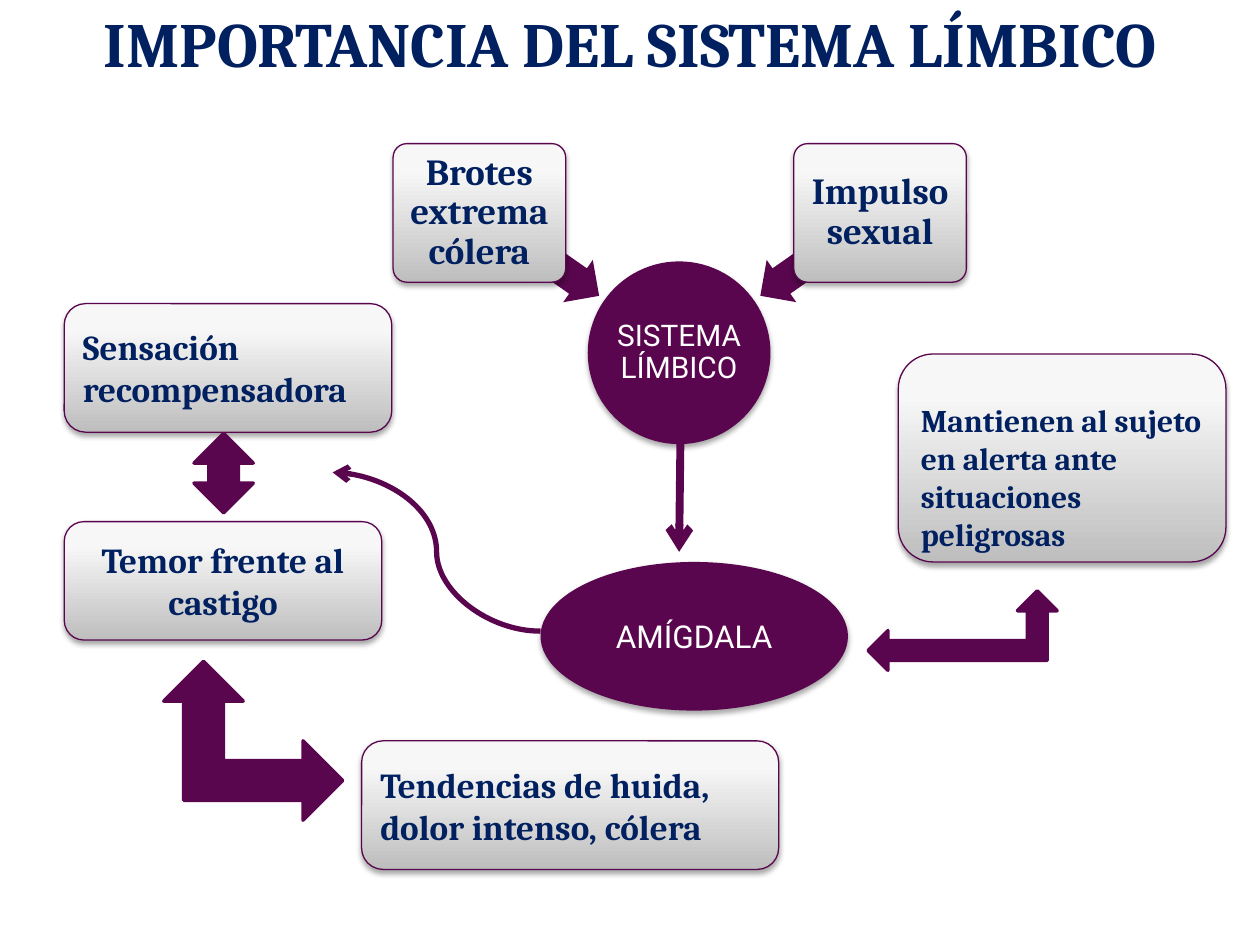
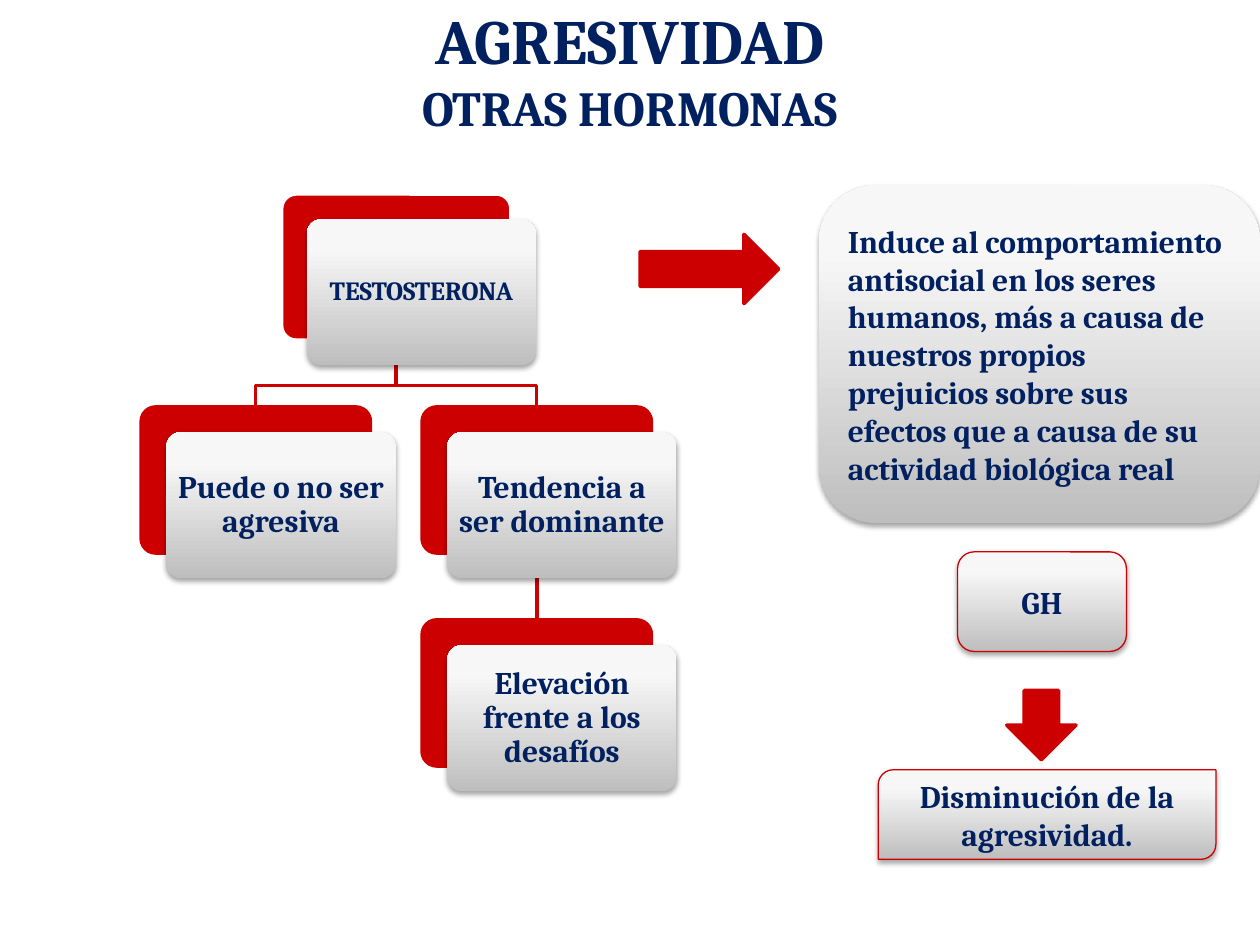
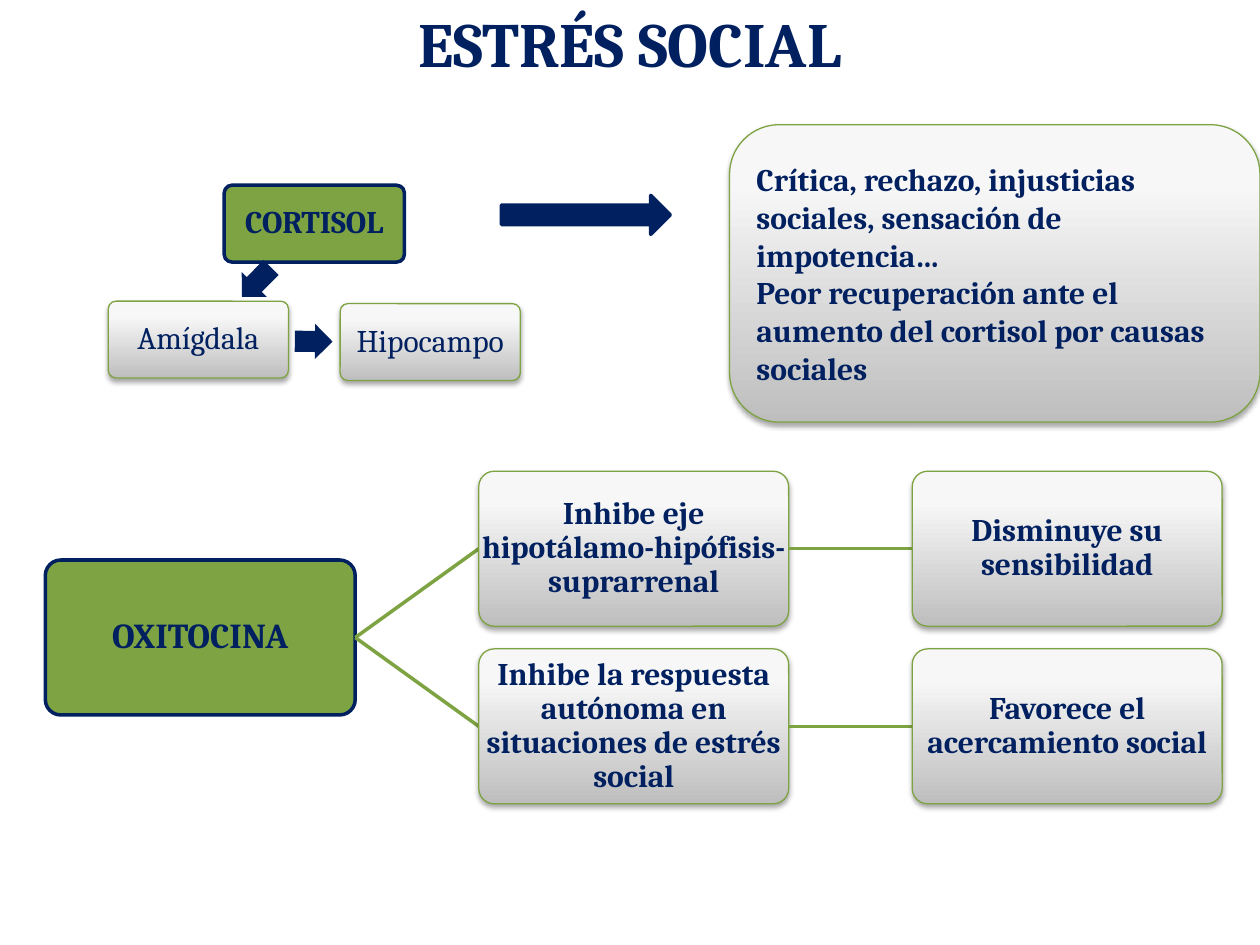
from pptx import Presentation
from pptx import util as u
from pptx.dml.color import RGBColor
from pptx.enum import shapes, text
from pptx.oxml import parse_xml
from pptx.oxml.ns import nsdecls, qn

NAVY, PLUM, RED, GREEN, WHITE = "002060", "5A064E", "CC0000", "7EA343", "FFFFFF"
SILVER = [(0, "BEBEBE"), (80, "F7F7F7"), (100, "F8F8F8")]
SERIF, SANS = "Cambria", "Roboto"
WIDTH, HEIGHT = 10, 7.5
PRESET, LINK = shapes.MSO_SHAPE, shapes.MSO_CONNECTOR
LEFT, CENTER = text.PP_ALIGN.LEFT, text.PP_ALIGN.CENTER
ROUND = PRESET.ROUNDED_RECTANGLE

IMPULSES = [
    ("Brotes extrema cólera", (3.12, 1.14, 1.37, 1.1), (3.7, 1.81, 1.16, 0.41), 215),
    ("Impulso sexual", (6.3, 1.14, 1.37, 1.1), (5.93, 1.81, 1.16, 0.41), 325),
]
REACTIONS = [
    ("Tendencias de huida, dolor intenso, cólera", (2.87, 5.88, 3.31, 1.02), LEFT, 20, 0.05),
    ("Sensación recompensadora", (0.51, 2.41, 2.6, 1.02), LEFT, 20, 0.05),
    ("Mantienen al sujeto en alerta ante situaciones peligrosas",
     (7.13, 2.81, 2.6, 1.65), LEFT, 18, 0.35),
    ("Temor frente al castigo", (0.51, 4.14, 2.52, 0.94), CENTER, 20, 0.05),
]
REACTION_ARROWS = [
    (PRESET.UP_DOWN_ARROW, (1.54, 3.44, 0.47, 0.63), 0),
    (PRESET.LEFT_UP_ARROW, (1.38, 5.17, 1.26, 1.42), 90),
    (PRESET.LEFT_UP_ARROW, (6.89, 4.69, 1.5, 0.63), 0),
]

TESTOSTERONE_TREE = [
    ("TESTOSTERONA", 0.5, 0, 15, WHITE),
    ("Puede o no ser agresiva", 0, 1, 18, RED),
    ("Tendencia a ser dominante", 1, 1, 18, RED),
    ("Elevación frente a los desafíos", 1, 2, 18, RED),
]
ANTISOCIAL = ("Induce al comportamiento antisocial en los seres humanos, más a causa de "
              "nuestros propios prejuicios sobre sus efectos que a causa de su actividad "
              "biológica real")

CORTISOL_TARGETS = [
    ("Amígdala", (0.86, 2.39, 1.43, 0.61)),
    ("Hipocampo", (2.7, 2.41, 1.43, 0.61)),
]
CORTISOL_ARROWS = [((1.87, 2.1, 0.33, 0.28), 134.8), ((2.34, 2.57, 0.3, 0.28), 0.6)]
SOCIAL_CAUSES = ("Crítica, rechazo, injusticias sociales, sensación de impotencia…\n"
                 "Peor recuperación ante el aumento del cortisol por causas sociales")
OXYTOCIN_ROWS = [
    ("Inhibe eje hipotálamo-hipófisis-suprarrenal", "Disminuye su sensibilidad"),
    ("Inhibe la respuesta autónoma en situaciones de estrés social",
     "Favorece el acercamiento social"),
]


def color(value):
    return RGBColor.from_string(value)


def inches(values):
    return [u.Inches(value) for value in values]


def write(shape, content, size, align=CENTER, tone=NAVY, font=SERIF, bold=True,
          margin=None, top=0.05, spacing=None):
    frame = shape.text_frame
    frame.word_wrap = True
    frame.vertical_anchor = text.MSO_ANCHOR.MIDDLE
    if margin is not None:
        frame.margin_left = frame.margin_right = u.Inches(margin)
        frame.margin_bottom = u.Inches(margin)
        top = margin
    frame.margin_top = u.Inches(top)
    paragraph = frame.paragraphs[0]
    paragraph.alignment = align
    paragraph.line_spacing = spacing
    sizes = size if isinstance(size, tuple) else (size,)
    for index, part in enumerate(content.split("\n")):
        if index:
            paragraph.add_line_break()
        run = paragraph.add_run()
        run.text = part
        run.font.name = font
        run.font.size = u.Pt(sizes[min(index, len(sizes) - 1)])
        run.font.bold = bold
        run.font.color.rgb = color(tone)


def paint_line(line, tone, width):
    if tone is None:
        line.fill.background()
    else:
        line.color.rgb = color(tone)
        line.width = u.Pt(width)


def add_shadow(shape):
    shape._element.spPr.find(qn("a:effectLst")).append(parse_xml(
        f'<a:outerShdw {nsdecls("a")} blurRad="{u.Pt(3.1)}" dist="{u.Pt(1.8)}" '
        'dir="5400000" rotWithShape="0"><a:srgbClr val="000000">'
        '<a:alpha val="35000"/></a:srgbClr></a:outerShdw>'))


def add_shape(slide, preset, box, fill, line=None, width=2, rotation=0, adjust=(),
              shadow=False):
    shape = slide.shapes.add_shape(preset, *inches(box))
    shape.rotation = rotation
    for index, value in enumerate(adjust):
        shape.adjustments[index] = value
    if fill == SILVER:
        shape.fill.gradient()
        shape.fill.gradient_angle = 90
        stops = shape._element.spPr.find(qn("a:gradFill")).find(qn("a:gsLst"))
        for stop in list(stops):
            stops.remove(stop)
        for position, tone in SILVER:
            stops.append(parse_xml(
                f'<a:gs {nsdecls("a")} pos="{position * 1000}">'
                f'<a:srgbClr val="{tone}"/></a:gs>'))
    else:
        shape.fill.solid()
        shape.fill.fore_color.rgb = color(fill)
    paint_line(shape.line, line, width)
    shape.shadow.inherit = False
    if shadow:
        add_shadow(shape)
    return shape


def add_panel(slide, content, box, line, size=18, align=CENTER, top=0.05, preset=ROUND):
    panel = add_shape(slide, preset, box, SILVER, line, 0.75, shadow=True)
    write(panel, content, size, align, top=top)


def add_label(slide, content, box, size, margin, **style):
    label = slide.shapes.add_textbox(*inches(box))
    write(label, content, size, margin=margin, spacing=0.9, **style)


def add_card(slide, content, box, line, size=18, margin=0.07, bold=True):
    add_shape(slide, ROUND, box, SILVER, line, 0.75, adjust=[0.1], shadow=True)
    add_label(slide, content, box, size, margin, bold=bold)


def add_source_card(slide, content, box, size, margin):
    add_shape(slide, ROUND, box, GREEN, NAVY, adjust=[0.1])
    add_label(slide, content, box, size, margin)


def add_link(slide, start, end, tone, width=2, kind=LINK.STRAIGHT, arrow=False):
    connector = slide.shapes.add_connector(kind, *inches(start + end))
    paint_line(connector.line, tone, width)
    if arrow:
        connector.line._get_or_add_ln().append(
            parse_xml(f'<a:tailEnd {nsdecls("a")} type="arrow"/>'))
    connector._element.spPr.append(parse_xml(f'<a:effectLst {nsdecls("a")}/>'))


def add_branch(slide, points, tone):
    start, *rest = [inches(point) for point in points]
    builder = slide.shapes.build_freeform(*start)
    builder.add_line_segments(rest, close=False)
    branch = builder.convert_to_shape()
    branch.fill.background()
    paint_line(branch.line, tone, 2)
    branch.shadow.inherit = False


def new_slide(presentation, title, top=0, size=36):
    slide = presentation.slides.add_slide(presentation.slide_layouts[6])
    box = slide.shapes.add_textbox(*inches((0, top, WIDTH, 0.67)))
    write(box, title, size)
    return slide


def build_limbic(presentation):
    slide = new_slide(presentation, "IMPORTANCIA DEL SISTEMA LÍMBICO")
    hub = (4.67, 2.08, 1.44, 1.44)
    add_shape(slide, PRESET.OVAL, hub, PLUM, PLUM, 0.75, shadow=True)
    add_label(slide, "SISTEMA LÍMBICO", hub, 17, 0.01, tone=WHITE, font=SANS, bold=False)
    for content, box, arrow, rotation in IMPULSES:
        add_shape(slide, PRESET.LEFT_ARROW, arrow, PLUM, rotation=rotation, adjust=[0.6, 0.5])
        add_card(slide, content, box, PLUM, 21, 0.04)
    for content, box, align, size, top in REACTIONS:
        add_panel(slide, content, box, PLUM, size, align, top)
    amygdala = add_shape(slide, PRESET.OVAL, (4.29, 4.46, 2.44, 1.18), PLUM, shadow=True)
    write(amygdala, "AMÍGDALA", 18, tone=WHITE, font=SANS, bold=False)
    add_link(slide, (5.4, 3.51), (5.39, 4.38), PLUM, 4.5, arrow=True)
    add_link(slide, (4.29, 5.01), (2.64, 3.75), PLUM, 3, LINK.CURVE, arrow=True)
    for preset, box, rotation in REACTION_ARROWS:
        add_shape(slide, preset, box, PLUM, PLUM, rotation=rotation)


def build_hormones(presentation):
    slide = new_slide(presentation, "AGRESIVIDAD\nOTRAS HORMONAS", 0.21, (36, 28))
    left, top, column_step, row_step = 1.12, 1.54, 2.23, 1.69
    width, height, offset = 1.82, 1.16, 0.2

    def middle(column):
        return left + column * column_step + width / 2

    def row_top(row):
        return top + row * row_step

    trunk, fork = middle(0.5), row_top(1) - 0.17
    add_link(slide, (middle(1), row_top(1) + height), (middle(1), row_top(2)), RED)
    for column in (1, 0):
        add_branch(slide, [(trunk, row_top(0) + height), (trunk, fork),
                           (middle(column), fork), (middle(column), row_top(1))], RED)
    for content, column, row, size, line in TESTOSTERONE_TREE:
        x, y = left + column * column_step, row_top(row)
        add_shape(slide, ROUND, (x, y, width, height), RED, line, adjust=[0.1])
        add_card(slide, content, (x + offset, y + offset, width, height), None, size)
    add_shape(slide, PRESET.RIGHT_ARROW, (5.08, 1.86, 1.1, 0.55), RED, RED)
    add_panel(slide, ANTISOCIAL, (6.5, 1.47, 3.5, 2.68), None, align=LEFT)
    add_panel(slide, "GH", (7.6, 4.38, 1.34, 0.79), RED)
    add_panel(slide, "Disminución de la agresividad.", (6.97, 6.11, 2.68, 0.71), RED,
              preset=PRESET.ROUND_2_DIAG_RECTANGLE)
    add_shape(slide, PRESET.DOWN_ARROW, (7.99, 5.48, 0.55, 0.55), RED, RED)


def build_stress(presentation):
    slide = new_slide(presentation, "ESTRÉS SOCIAL")
    add_source_card(slide, "CORTISOL", (1.78, 1.47, 1.43, 0.61), 18, 0.07)
    for (content, box), (arrow, rotation) in zip(CORTISOL_TARGETS, CORTISOL_ARROWS):
        add_shape(slide, PRESET.RIGHT_ARROW, arrow, NAVY, rotation=rotation, adjust=[0.6, 0.5])
        add_card(slide, content, box, GREEN, bold=False)
    add_shape(slide, PRESET.RIGHT_ARROW, (3.98, 1.55, 1.34, 0.31), NAVY, NAVY)
    add_panel(slide, SOCIAL_CAUSES, (5.79, 0.99, 4.21, 2.36), GREEN, align=LEFT)

    width, height = 2.46, 1.23

    def cell(column, row):
        return 0.36 + 3.44 * column, 3.74 + 1.41 * row, width, height

    def side(column, row, share):
        x, y, _, _ = cell(column, row)
        return x + share * width, y + height / 2

    add_source_card(slide, "OXITOCINA", cell(0, 0.5), 20, 0.01)
    for row, (effect, outcome) in enumerate(OXYTOCIN_ROWS):
        add_link(slide, side(0, 0.5, 1), side(1, row, 0), GREEN)
        add_card(slide, effect, cell(1, row), GREEN, margin=0.01)
        add_link(slide, side(1, row, 1), side(2, row, 0), GREEN)
        add_card(slide, outcome, cell(2, row), GREEN, margin=0.01)


def main():
    presentation = Presentation()
    presentation.slide_width, presentation.slide_height = inches((WIDTH, HEIGHT))
    build_limbic(presentation)
    build_hormones(presentation)
    build_stress(presentation)
    presentation.save("out.pptx")


if __name__ == "__main__":
    main()
